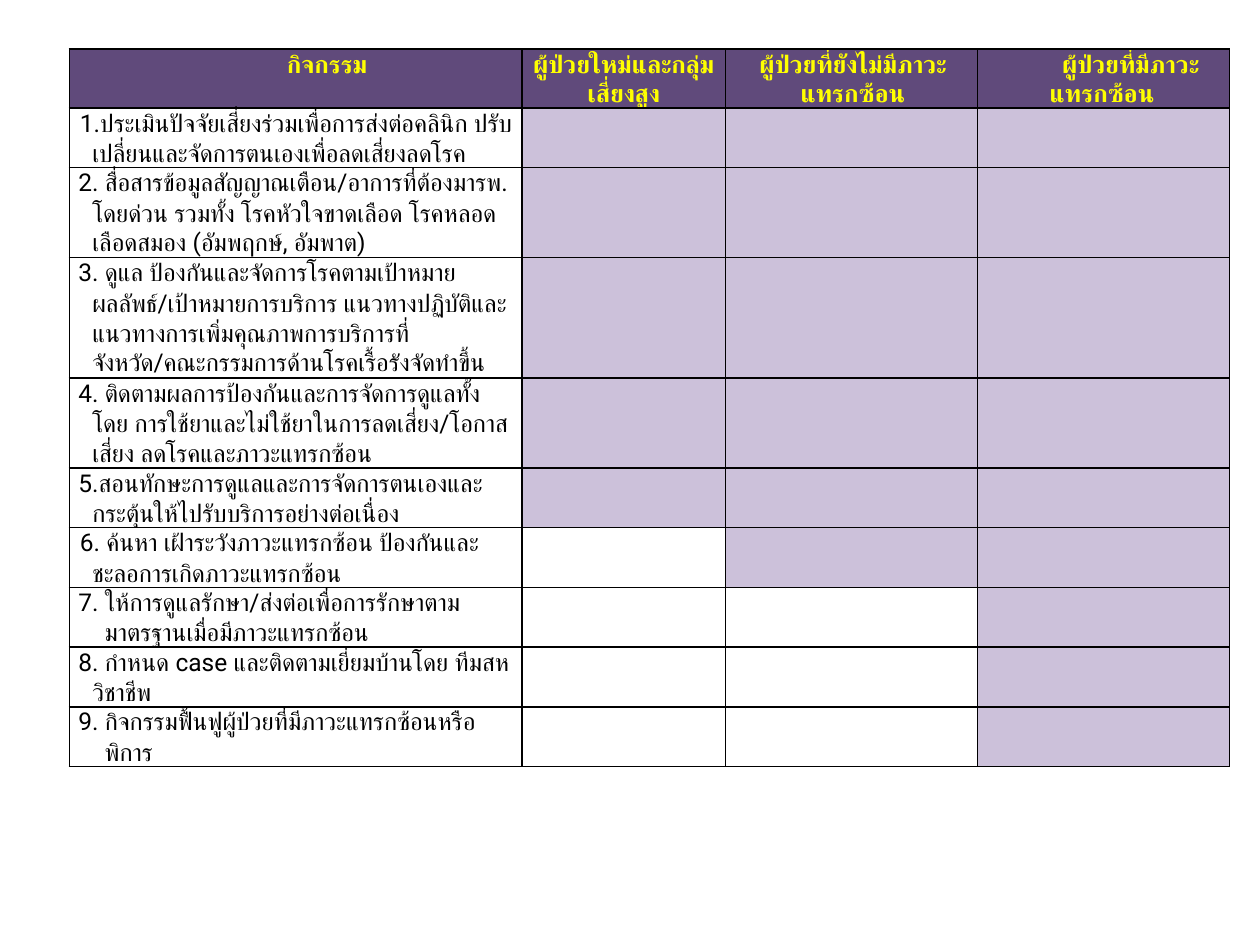
from lxml import etree
from pptx import Presentation
from pptx.dml.color import RGBColor
from pptx.enum.text import PP_ALIGN
from pptx.oxml.ns import qn
from pptx.util import Cm, Pt

CENTER, LEFT = PP_ALIGN.CENTER, PP_ALIGN.LEFT
PURPLE, LILAC, WHITE, BLACK, YELLOW = "604A7B", "CCC1DA", "FFFFFF", "000000", "FFFF00"
THAI_FONT = "Lato"
COLUMN_WIDTHS = [9.12, 4.11, 5.08, 5.08]
ROW_HEIGHT = 1.07

# heading, alignment, left indent, first-line indent (cm)
HEADINGS = [
    ("กิจกรรม", CENTER, 1.27, 0),
    ("ผู้ป่วยใหม่และกลุ่มเสี่ยงสูง", CENTER, 0, 0),
    ("ผู้ป่วยที่ยังไม่มีภาวะแทรกซ้อน", CENTER, 0.05, 0),
    ("ผู้ป่วยที่มีภาวะแทรกซ้อน", LEFT, 1.27, 0.25),
]

# activity, left indent, first-line indent (cm), number of patient groups it covers
ACTIVITIES = [
    ("1.ประเมินปัจจัยเสี่ยงร่วมเพื่อการส่งต่อคลินิก ปรับเปลี่ยนและจัดการตนเองเพื่อลดเสี่ยงลดโรค",
     0.28, -0.25, 3),
    ("2. สื่อสารข้อมูลสัญญาณเตือน/อาการที่ต้องมารพ. โดยด่วน รวมทั้ง โรคหัวใจขาดเลือด "
     "โรคหลอดเลือดสมอง (อัมพฤกษ์, อัมพาต)", 0.28, -0.28, 3),
    ("3. ดูแล ป้องกันและจัดการโรคตามเป้าหมาย ผลลัพธ์/เป้าหมายการบริการ แนวทางปฏิบัติและ "
     "แนวทางการเพิ่มคุณภาพการบริการที่ จังหวัด/คณะกรรมการด้านโรคเรื้อรังจัดทำขึ้น",
     0.28, -0.28, 3),
    ("4. ติดตามผลการป้องกันและการจัดการดูแลทั้งโดย การใช้ยาและไม่ใช้ยาในการลดเสี่ยง/โอกาสเสี่ยง "
     "ลดโรคและภาวะแทรกซ้อน", 0.28, -0.28, 3),
    ("5.สอนทักษะการดูแลและการจัดการตนเองและ กระตุ้นให้ไปรับบริการอย่างต่อเนื่อง",
     0.28, -0.28, 3),
    ("6. ค้นหา เฝ้าระวังภาวะแทรกซ้อน ป้องกันและชะลอการเกิดภาวะแทรกซ้อน", 0.28, -0.25, 2),
    ("7. ให้การดูแลรักษา/ส่งต่อเพื่อการรักษาตามมาตรฐานเมื่อมีภาวะแทรกซ้อน", 0.53, -0.53, 1),
    ("8. กำหนด case และติดตามเยี่ยมบ้านโดย ทีมสหวิชาชีพ", 0.28, -0.28, 1),
    ("9. กิจกรรมฟื้นฟูผู้ป่วยที่มีภาวะแทรกซ้อนหรือพิการ", 0.53, -0.53, 1),
]


def rgb(hex_color):
    return RGBColor.from_string(hex_color)


def add_borders(cell):
    properties = cell._tc.get_or_add_tcPr()
    for position, side in enumerate(("lnL", "lnR", "lnT", "lnB")):
        border = etree.Element(qn(f"a:{side}"), w=str(Pt(1)))
        fill = etree.SubElement(border, qn("a:solidFill"))
        etree.SubElement(fill, qn("a:srgbClr"), val=BLACK)
        properties.insert(position, border)


def style_cell(cell, fill):
    cell.fill.solid()
    cell.fill.fore_color.rgb = rgb(fill)
    cell.margin_left = cell.margin_right = Cm(0.18)
    cell.margin_top = cell.margin_bottom = 0
    add_borders(cell)


def write_cell(cell, text, font_name, color, bold, align, left, first_line):
    paragraph = cell.text_frame.paragraphs[0]
    paragraph.text = text
    paragraph.alignment = align
    font = paragraph.font
    font.name, font.size, font.bold = font_name, Pt(14), bold
    font.color.rgb = rgb(color)
    properties = paragraph._p.get_or_add_pPr()
    properties.set("marL", str(Cm(left)))
    properties.set("indent", str(Cm(first_line)))
    # Thai letters take the complex-script font
    etree.SubElement(properties.find(qn("a:defRPr")), qn("a:cs"), typeface=THAI_FONT)
    return paragraph


def add_activity_table(slide):
    row_count = len(ACTIVITIES) + 1
    table = slide.shapes.add_table(
        row_count, len(COLUMN_WIDTHS), Cm(1.4), Cm(0.99),
        Cm(sum(COLUMN_WIDTHS)), Cm(ROW_HEIGHT * row_count)).table
    table.first_row = table.horz_banding = False
    for column, width in zip(table.columns, COLUMN_WIDTHS):
        column.width = Cm(width)
    for row in table.rows:
        row.height = Cm(ROW_HEIGHT)
    return table


def fill_headings(table):
    for column, (heading, align, left, first_line) in enumerate(HEADINGS):
        cell = table.cell(0, column)
        style_cell(cell, PURPLE)
        write_cell(cell, heading, "Lato", YELLOW, True, align, left, first_line)


def fill_activities(table):
    """Shade the rightmost patient groups that each activity covers."""
    columns = len(COLUMN_WIDTHS)
    for row, (activity, left, first_line, covered) in enumerate(ACTIVITIES, start=1):
        for column in range(columns):
            style_cell(table.cell(row, column),
                       LILAC if column >= columns - covered else WHITE)
        paragraph = write_cell(table.cell(row, 0), activity, "Roboto", BLACK, False,
                               LEFT, left, first_line)
        paragraph.space_after = Pt(6)


def main():
    presentation = Presentation()
    presentation.slide_width, presentation.slide_height = Cm(25.4), Cm(19.05)
    slide = presentation.slides.add_slide(presentation.slide_layouts[6])
    table = add_activity_table(slide)
    fill_headings(table)
    fill_activities(table)
    presentation.save("out.pptx")


if __name__ == "__main__":
    main()
